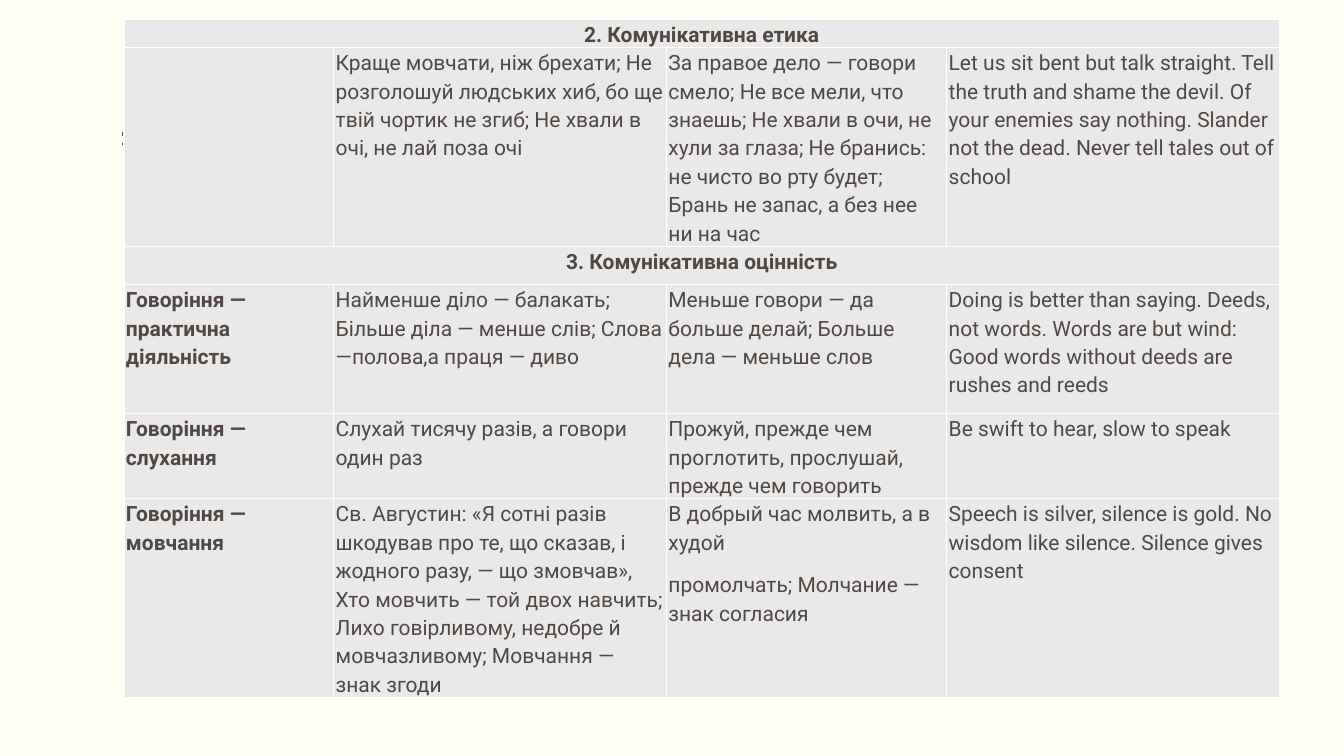
import pptx
import pptx.util
import pptx.dml.color
import pptx.enum.shapes
import pptx.enum.text
import pptx.oxml
import pptx.oxml.ns
import lxml.etree

Inches, Pt = pptx.util.Inches, pptx.util.Pt
HUES = {"back": "FFFFF3", "ink": "514843", "cell": "E9E9E9", "edge": "FFFFFF"}
FONT = "Roboto"
COLS = [2.08, 3.3, 2.78, 3.3]
HIGHS = [0.27, 1.97, 0.38, 1.28, 0.84, 1.97]
# A row with one entry is a heading across all columns.
ROWS = [
    ["2. Комунікативна етика"],
    ["",
     "Краще мовчати, ніж брехати; Не розголошуй людських хиб, бо ще твій чортик "
     "не згиб; Не хвали в очі, не лай поза очі",
     "За правое дело — говори смело; Не все мели, что знаешь; Не хвали в очи, не "
     "хули за глаза; Не бранись: не чисто во рту будет; Брань не запас, а без нее "
     "ни на час",
     "Let us sit bent but talk straight. Tell the truth and shame the devil. Of "
     "your enemies say nothing. Slander not the dead. Never tell tales out of school"],
    ["3. Комунікативна оцінність"],
    ["Говоріння —практична діяльність",
     "Найменше діло — балакать; Більше діла — менше слів; Слова —полова,а праця — диво",
     "Меньше говори — да больше делай; Больше дела — меньше слов",
     "Doing is better than saying. Deeds, not words. Words are but wind: Good words "
     "without deeds are rushes and reeds"],
    ["Говоріння — слухання",
     "Слухай тисячу разів, а говори один раз",
     "Прожуй, прежде чем проглотить, прослушай, прежде чем говорить",
     "Be swift to hear, slow to speak"],
    ["Говоріння — мовчання",
     "Св. Августин: «Я сотні разів шкодував про те, що сказав, і жодного разу, — "
     "що змовчав», Хто мовчить — той двох навчить; Лихо говірливому, недобре й "
     "мовчазливому; Мовчання — знак згоди",
     "В добрый час молвить, а в худой\nпромолчать; Молчание — знак согласия",
     "Speech is silver, silence is gold. No wisdom like silence. Silence gives consent"],
]


def color(name):
    return pptx.dml.color.RGBColor.from_string(HUES[name])


def add_rules(slide, left, top, width):
    """Draw the thick and thin line pair behind the table."""
    for gap, size in [(0, 3), (0.1, 1)]:
        y = Inches(top + gap)
        rule = slide.shapes.add_connector(
            pptx.enum.shapes.MSO_CONNECTOR.STRAIGHT,
            Inches(left + width), y, Inches(left), y)
        rule.line.color.rgb = color("ink")
        rule.line.width = Pt(size)
        lxml.etree.SubElement(rule._element.spPr, pptx.oxml.ns.qn("a:effectLst"))


def style_cell(cell):
    cell.margin_left = cell.margin_right = Inches(0.02)
    cell.margin_top = cell.margin_bottom = 0
    cell.fill.solid()
    cell.fill.fore_color.rgb = color("cell")
    props = cell._tc.get_or_add_tcPr()
    for spot, side in enumerate(["lnL", "lnR", "lnT", "lnB"]):
        props.insert(spot, pptx.oxml.parse_xml(
            f'<a:{side} {pptx.oxml.ns.nsdecls("a")} w="{Pt(1)}"><a:solidFill>'
            f'<a:srgbClr val="{HUES["edge"]}"/></a:solidFill></a:{side}>'))


def fill_cell(cell, text, bold, center):
    cell.text_frame.text = text
    for para in cell.text_frame.paragraphs:
        para.line_spacing = 1.15
        para.space_after = Pt(10)
        if center:
            para.alignment = pptx.enum.text.PP_ALIGN.CENTER
        for run in para.runs:
            run.font.name = FONT
            run.font.size = Pt(15)
            run.font.bold = bold
            run.font.color.rgb = color("ink")


def add_grid(slide, left, top):
    """Place the table of proverbs with its top left corner at the given point."""
    grid = slide.shapes.add_table(
        len(ROWS), len(COLS), Inches(left), Inches(top),
        Inches(sum(COLS)), Inches(sum(HIGHS))).table
    for col, width in zip(grid.columns, COLS):
        col.width = Inches(width)
    for r, texts in enumerate(ROWS):
        grid.rows[r].height = Inches(HIGHS[r])
        for c in range(len(COLS)):
            style_cell(grid.cell(r, c))
        head = len(texts) == 1
        if head:
            grid.cell(r, 0).merge(grid.cell(r, len(COLS) - 1))
        for c, text in enumerate(texts):
            fill_cell(grid.cell(r, c), text, c == 0, head)


def main():
    deck = pptx.Presentation()
    deck.slide_width, deck.slide_height = Inches(13.33), Inches(7.5)
    slide = deck.slides.add_slide(deck.slide_layouts[6])
    slide.background.fill.solid()
    slide.background.fill.fore_color.rgb = color("back")
    add_rules(slide, 1.21, 1.33, 10.92)
    add_grid(slide, 1.23, 0.19)
    deck.save("out.pptx")


if __name__ == "__main__":
    main()
